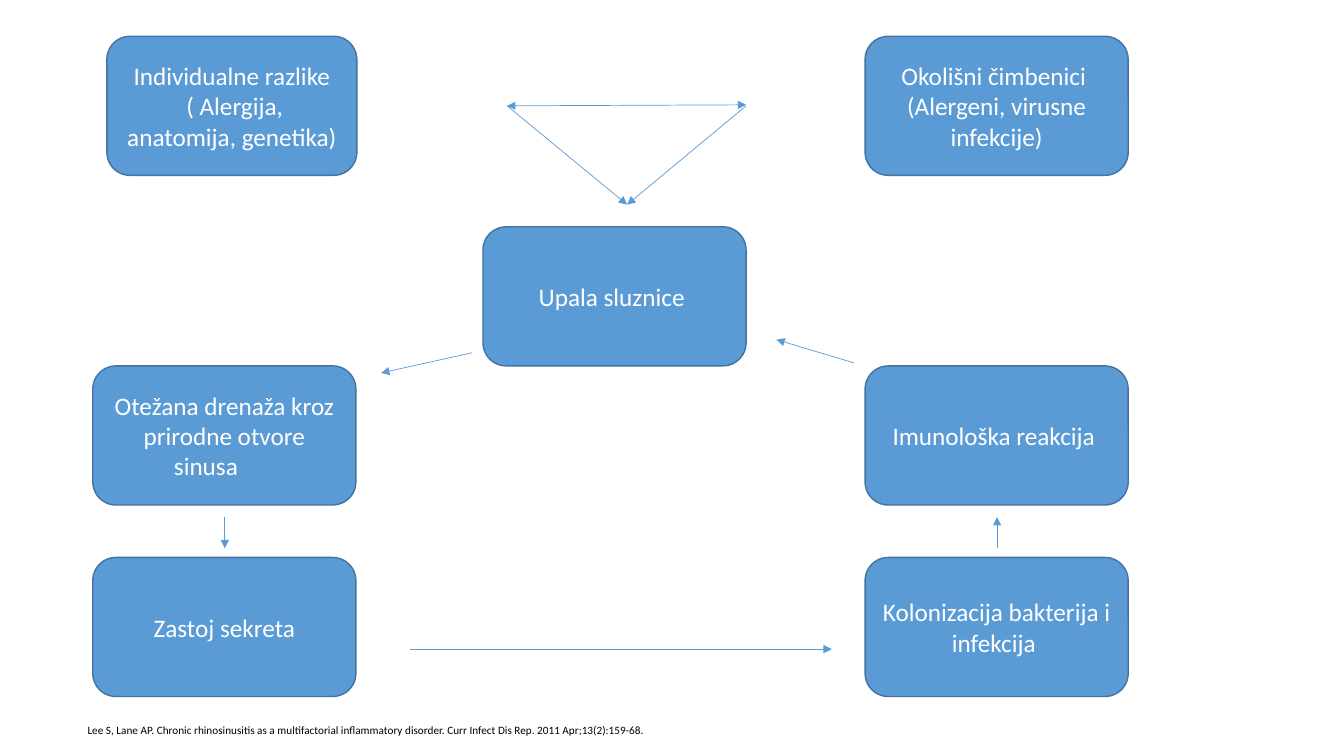
import dataclasses

import lxml.etree
import pptx
import pptx.dml.color
import pptx.enum.shapes
import pptx.enum.text
import pptx.oxml.ns
import pptx.util

Inches = pptx.util.Inches


def rgb(value):
    return pptx.dml.color.RGBColor.from_string(value)


@dataclasses.dataclass(frozen=True)
class Theme:
    font: str = "Calibri"
    fill: str = "5B9BD5"
    outline: str = "43739E"
    box_text: str = "FFFFFF"
    source_text: str = "000000"
    box_size: float = 18
    source_size: float = 8
    outline_width: float = 1
    arrow_width: float = 0.5


class DiagramSlide:
    def __init__(self, slide, theme):
        self.slide = slide
        self.theme = theme

    def fill_text(self, shape, lines, size, color, alignment, frame_format):
        frame = shape.text_frame
        for name, value in frame_format.items():
            setattr(frame, name, value)
        font_format = {"name": self.theme.font, "size": pptx.util.Pt(size)}
        for index, line in enumerate(lines):
            paragraph = frame.add_paragraph() if index else frame.paragraphs[0]
            paragraph.alignment = alignment
            run = paragraph.add_run()
            run.text = line
            for name, value in font_format.items():
                setattr(run.font, name, value)
            run.font.color.rgb = rgb(color)

    def box(self, left, top, width, height, lines):
        shape = self.slide.shapes.add_shape(
            pptx.enum.shapes.MSO_SHAPE.FLOWCHART_ALTERNATE_PROCESS,
            Inches(left), Inches(top), Inches(width), Inches(height))
        shape.shadow.inherit = False
        shape.fill.solid()
        shape.fill.fore_color.rgb = rgb(self.theme.fill)
        shape.line.color.rgb = rgb(self.theme.outline)
        shape.line.width = pptx.util.Pt(self.theme.outline_width)
        self.fill_text(shape, lines, self.theme.box_size, self.theme.box_text,
                       pptx.enum.text.PP_ALIGN.CENTER,
                       {"word_wrap": True,
                        "vertical_anchor": pptx.enum.text.MSO_ANCHOR.MIDDLE})

    def arrow(self, start, end, ends=("tailEnd",)):
        connector = self.slide.shapes.add_connector(
            pptx.enum.shapes.MSO_CONNECTOR.STRAIGHT,
            *(Inches(value) for value in start + end))
        connector.line.color.rgb = rgb(self.theme.fill)
        connector.line.width = pptx.util.Pt(self.theme.arrow_width)
        properties = connector.element.spPr
        line = properties.find(pptx.oxml.ns.qn("a:ln"))
        for name in ends:
            lxml.etree.SubElement(line, pptx.oxml.ns.qn(f"a:{name}"), type="triangle")
        lxml.etree.SubElement(properties, pptx.oxml.ns.qn("a:effectLst"))

    def source(self, left, top, width, height, text):
        shape = self.slide.shapes.add_textbox(
            Inches(left), Inches(top), Inches(width), Inches(height))
        self.fill_text(shape, [text], self.theme.source_size, self.theme.source_text,
                       pptx.enum.text.PP_ALIGN.LEFT,
                       {"word_wrap": True,
                        "auto_size": pptx.enum.text.MSO_AUTO_SIZE.SHAPE_TO_FIT_TEXT})


BOX_WIDTH, BOX_HEIGHT = 2.61, 1.38
LEFT, CENTER, RIGHT = 0.92, 4.79, 8.58
CAUSES, INFLAMMATION, MIDDLE, BOTTOM = 0.36, 2.25, 3.63, 5.53
LEFT_AXIS, RIGHT_AXIS = 2.23, 9.89
GAP_TOP, GAP_BOTTOM = 5.13, 5.44

BOXES = [
    (1.06, CAUSES, 2.48, ["Individualne razlike", " ( Alergija, anatomija, genetika)"]),
    (RIGHT, CAUSES, BOX_WIDTH, ["Okolišni čimbenici ", "(Alergeni, virusne infekcije)"]),
    (CENTER, INFLAMMATION, BOX_WIDTH, ["Upala sluznice "]),
    (LEFT, MIDDLE, BOX_WIDTH, ["Otežana drenaža kroz prirodne otvore sinusa\t"]),
    (RIGHT, MIDDLE, BOX_WIDTH, ["Imunološka reakcija "]),
    (RIGHT, BOTTOM, BOX_WIDTH, ["Kolonizacija bakterija i infekcija "]),
    (LEFT, BOTTOM, BOX_WIDTH, ["Zastoj sekreta"]),
]

INDIVIDUAL, ENVIRONMENT, MEETING = (5.03, 1.05), (7.4, 1.05), (6.22, 2.03)
ARROWS = [
    (INDIVIDUAL, MEETING),
    (ENVIRONMENT, MEETING),
    ((4.68, 3.5), (3.78, 3.7)),
    ((LEFT_AXIS, GAP_TOP), (LEFT_AXIS, GAP_BOTTOM)),
    ((4.07, 6.44), (8.25, 6.44)),
    ((RIGHT_AXIS, GAP_BOTTOM), (RIGHT_AXIS, GAP_TOP)),
    ((8.47, 3.6), (7.7, 3.37)),
]


def main():
    presentation = pptx.Presentation()
    presentation.slide_width = Inches(13.33)
    presentation.slide_height = Inches(7.5)
    blank_layout = presentation.slide_layouts.get_by_name("Blank")
    diagram = DiagramSlide(presentation.slides.add_slide(blank_layout), Theme())
    for left, top, width, lines in BOXES:
        diagram.box(left, top, width, BOX_HEIGHT, lines)
    diagram.arrow(INDIVIDUAL, (7.4, 1.04), ("headEnd", "tailEnd"))
    for start, end in ARROWS:
        diagram.arrow(start, end)
    diagram.source(0.77, 7.13, 10.27, 0.24,
                   "Lee S, Lane AP. Chronic rhinosinusitis as a multifactorial inflammatory "
                   "disorder. Curr Infect Dis Rep. 2011 Apr;13(2):159-68.")
    presentation.save("out.pptx")


if __name__ == "__main__":
    main()
